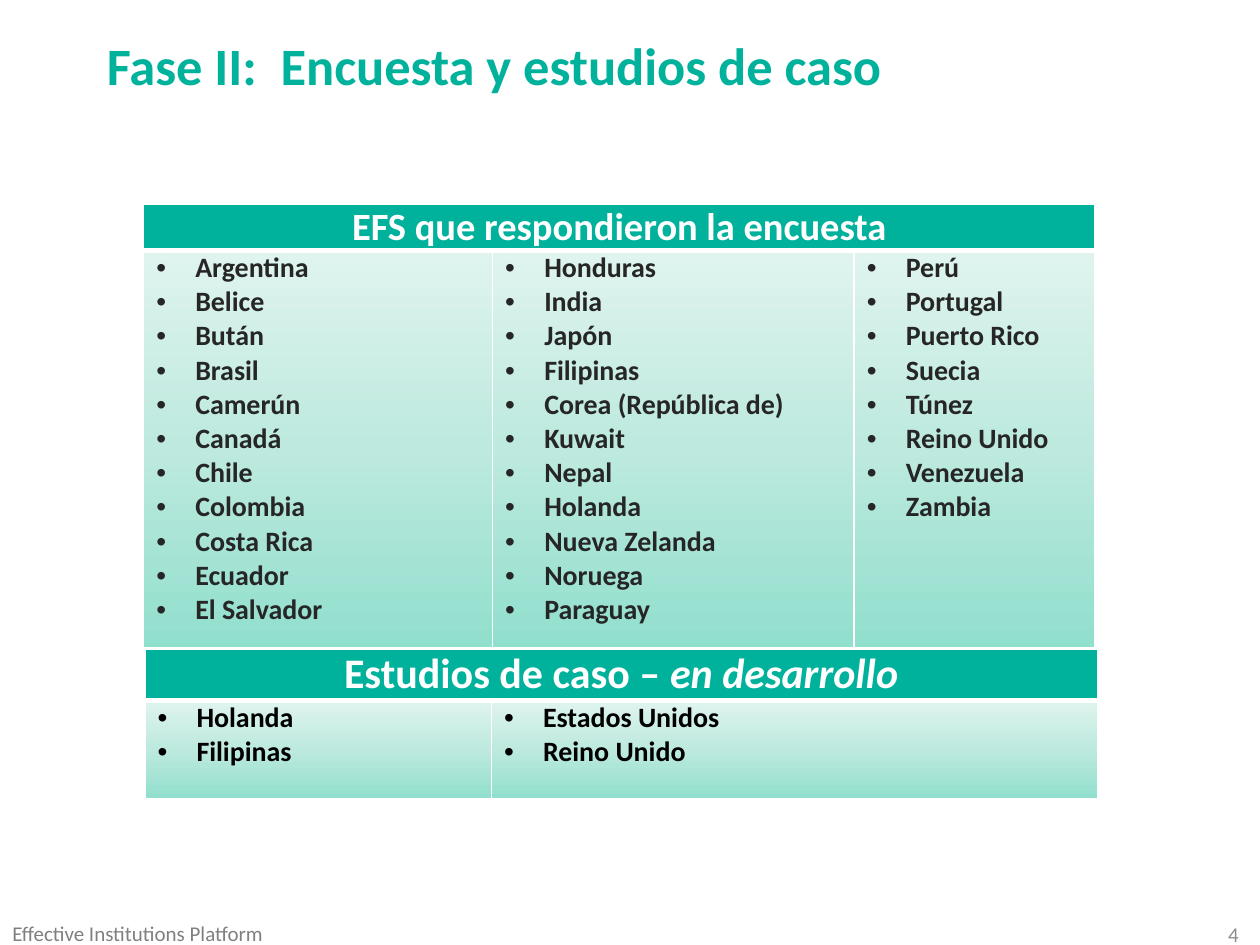
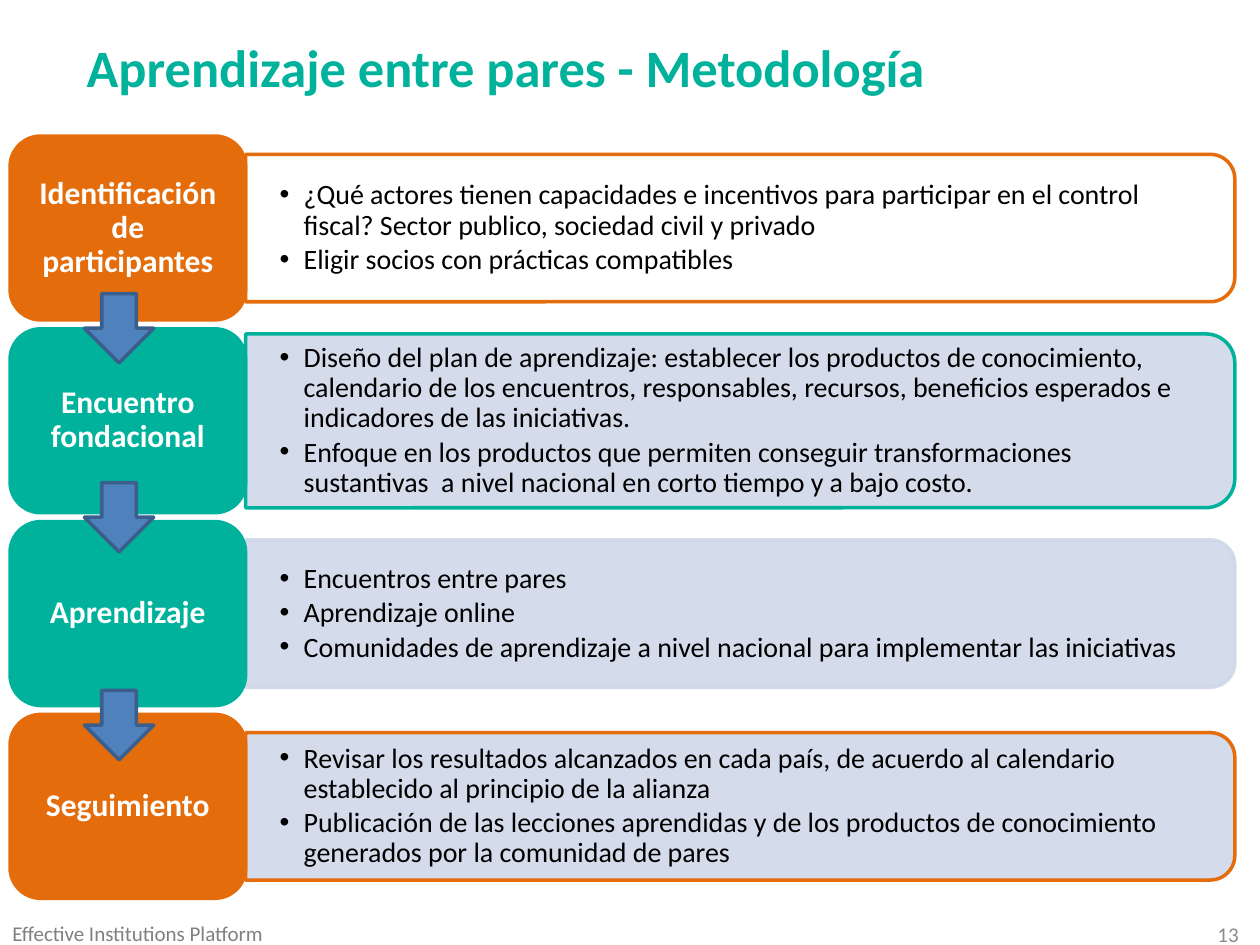
from dataclasses import dataclass

from lxml.etree import SubElement
from pptx import Presentation
from pptx.dml.color import RGBColor
from pptx.enum.shapes import MSO_SHAPE
from pptx.enum.text import MSO_ANCHOR, PP_ALIGN
from pptx.oxml.ns import qn
from pptx.util import Inches, Pt


@dataclass(frozen=True)
class Theme:
    font: str = "Calibri"
    teal: str = "00B29C"
    orange: str = "E46C0A"
    pale_blue: str = "D0D8E8"
    arrow_blue: str = "4F81BD"
    arrow_edge: str = "3A5F8C"
    white: str = "FFFFFF"
    black: str = "000000"
    dark: str = "262626"
    footer_gray: str = "808080"
    number_gray: str = "8C8C8C"
    mint: tuple = ((0, "91DFCD"), (50, "BDE9DE"), (100, "DFF4EE"))
    title_size: int = 30
    case_size: int = 24
    survey_size: int = 22
    stage_size: int = 18
    body_size: int = 16
    footer_size: int = 12


theme = Theme()


def write(frame, paragraphs, size, color, bold=False, indent=None,
          frame_format=None, paragraph_format=None):
    frame.word_wrap = True
    for name, value in (frame_format or {}).items():
        setattr(frame, name, value)
    for index, runs in enumerate(paragraphs):
        paragraph = frame.paragraphs[0] if index == 0 else frame.add_paragraph()
        if indent:
            properties = paragraph._p.get_or_add_pPr()
            properties.set("marL", str(Inches(indent)))
            properties.set("indent", str(-Inches(indent)))
            SubElement(properties, qn("a:buFont"), typeface="Arial")
            SubElement(properties, qn("a:buChar"), char="•")
        for name, value in (paragraph_format or {}).items():
            setattr(paragraph, name, value)
        for position, text in enumerate([runs] if isinstance(runs, str) else runs):
            run = paragraph.add_run()
            run.text = text
            font_format = {"name": theme.font, "size": Pt(size), "bold": bold,
                           "italic": position > 0}
            for name, value in font_format.items():
                setattr(run.font, name, value)
            run.font.color.rgb = RGBColor.from_string(color)


def style_cell(cell, is_header):
    cell.margin_top = cell.margin_bottom = 0
    properties = cell._tc.get_or_add_tcPr()
    widths = {"L": 1, "R": 1, "T": 1 if is_header else 3, "B": 3 if is_header else 1}
    for side, width in widths.items():
        border = SubElement(properties, qn(f"a:ln{side}"), w=str(Pt(width)))
        SubElement(SubElement(border, qn("a:solidFill")), qn("a:srgbClr"), val=theme.white)
    if is_header:
        cell.fill.solid()
        cell.fill.fore_color.rgb = RGBColor.from_string(theme.teal)
        return
    gradient = SubElement(properties, qn("a:gradFill"), rotWithShape="1")
    stops = SubElement(gradient, qn("a:gsLst"))
    for percent, color in theme.mint:
        stop = SubElement(stops, qn("a:gs"), pos=str(percent * 1000))
        SubElement(stop, qn("a:srgbClr"), val=color)
    SubElement(gradient, qn("a:lin"), ang=str(270 * 60000), scaled="1")


deck = Presentation()
deck.slide_width, deck.slide_height = Inches(10), Inches(7.5)

slides = []
for heading, left, top, number in [
    ("Fase II:  Encuesta y estudios de caso", 0.75, 0.21, "4"),
    ("Aprendizaje entre pares - Metodología", 0.59, 0.23, "13"),
]:
    slide = deck.slides.add_slide(deck.slide_layouts[6])
    slides.append(slide)
    page_number = slide.shapes.add_textbox(Inches(7.6), Inches(7.29), Inches(2.33), Inches(0.24))
    write(page_number.text_frame, [number], theme.footer_size, theme.number_gray,
          frame_format={"vertical_anchor": MSO_ANCHOR.MIDDLE},
          paragraph_format={"alignment": PP_ALIGN.RIGHT})
    footer = slide.shapes.add_textbox(0, Inches(7.26), Inches(4.84), Inches(0.3))
    write(footer.text_frame, ["Effective Institutions Platform"],
          theme.footer_size, theme.footer_gray)
    title = slide.shapes.add_textbox(Inches(left), Inches(top), Inches(9.06), Inches(0.61))
    write(title.text_frame, [heading], theme.title_size, theme.teal, bold=True)

survey_slide, method_slide = slides

country_tables = [
    (1.14, 1.62, (2.77, 2.87, 1.91), (0.37, 3.15),
     "EFS que respondieron la encuesta", theme.survey_size, theme.dark,
     [["Argentina", "Belice", "Bután", "Brasil", "Camerún", "Canadá", "Chile",
       "Colombia", "Costa Rica", "Ecuador", "El Salvador"],
      ["Honduras", "India", "Japón", "Filipinas", "Corea (República de)", "Kuwait",
       "Nepal", "Holanda", "Nueva Zelanda", "Noruega", "Paraguay"],
      ["Perú", "Portugal", "Puerto Rico", "Suecia", "Túnez", "Reino Unido",
       "Venezuela", "Zambia"]]),
    (1.15, 5.15, (2.75, 4.81), (0.41, 0.78),
     ("Estudios de caso – ", "en desarrollo"), theme.case_size, theme.black,
     [["Holanda", "Filipinas"], ["Estados Unidos", "Reino Unido"]]),
]
for left, top, widths, heights, heading, heading_size, country_color, countries in country_tables:
    table = survey_slide.shapes.add_table(
        2, len(widths), Inches(left), Inches(top),
        Inches(sum(widths)), Inches(sum(heights))).table
    for row, height in zip(table.rows, heights):
        row.height = Inches(height)
    for index, (width, names) in enumerate(zip(widths, countries)):
        table.columns[index].width = Inches(width)
        style_cell(table.cell(0, index), True)
        style_cell(table.cell(1, index), False)
        write(table.cell(1, index).text_frame, names, theme.body_size, country_color,
              bold=True, indent=0.31, paragraph_format={"alignment": PP_ALIGN.JUSTIFY})
    header = table.cell(0, 0)
    header.merge(table.cell(0, len(widths) - 1))
    write(header.text_frame, [heading], heading_size, theme.white, bold=True,
          paragraph_format={"alignment": PP_ALIGN.CENTER})

stages = [
    ("Identificación de participantes", theme.orange, theme.white, theme.orange, 1.17,
     ["¿Qué actores tienen capacidades e incentivos para participar en el control "
      "fiscal? Sector publico, sociedad civil y privado",
      "Eligir socios con prácticas compatibles"]),
    ("Encuentro fondacional", theme.teal, theme.pale_blue, theme.teal, 1.38,
     ["Diseño del plan de aprendizaje: establecer los productos de conocimiento, "
      "calendario de los encuentros, responsables, recursos, beneficios esperados e "
      "indicadores de las iniciativas.",
      "Enfoque en los productos que permiten conseguir transformaciones "
      "sustantivas  a nivel nacional en corto tiempo y a bajo costo."]),
    ("Aprendizaje", theme.teal, theme.pale_blue, theme.pale_blue, 1.17,
     ["Encuentros entre pares", "Aprendizaje online",
      "Comunidades de aprendizaje a nivel nacional para implementar las iniciativas"]),
    ("Seguimiento", theme.orange, theme.pale_blue, theme.orange, 1.17,
     ["Revisar los resultados alcanzados en cada país, de acuerdo al calendario "
      "establecido al principio de la alianza",
      "Publicación de las lecciones aprendidas y de los productos de conocimiento "
      "generados por la comunidad de pares"]),
]
stage_left, stage_width, stage_height, stage_step = 0.08, 1.87, 1.46, 1.53
panel_left, panel_length = stage_left + stage_width, 7.85
stage_format = {"vertical_anchor": MSO_ANCHOR.MIDDLE,
                "margin_left": Inches(0.14), "margin_right": Inches(0.14),
                "margin_top": Inches(0.11), "margin_bottom": Inches(0.11)}
detail_format = {"vertical_anchor": MSO_ANCHOR.MIDDLE,
                 "margin_left": Inches(0.27), "margin_right": Inches(0.27),
                 "margin_top": Inches(0.14), "margin_bottom": Inches(0.14)}

for index, (name, stage_color, panel_fill, panel_edge, depth, points) in enumerate(stages):
    stage_top = 1.08 + index * stage_step
    middle = stage_top + stage_height / 2

    panel = method_slide.shapes.add_shape(
        MSO_SHAPE.ROUND_2_SAME_RECTANGLE,
        Inches(panel_left + (panel_length - depth) / 2), Inches(middle - panel_length / 2),
        Inches(depth), Inches(panel_length))
    panel.rotation = 90
    stage = method_slide.shapes.add_shape(
        MSO_SHAPE.ROUNDED_RECTANGLE, Inches(stage_left), Inches(stage_top),
        Inches(stage_width), Inches(stage_height))
    for shape, fill, edge in [(panel, panel_fill, panel_edge), (stage, stage_color, stage_color)]:
        shape.shadow.inherit = False
        shape.fill.solid()
        shape.fill.fore_color.rgb = RGBColor.from_string(fill)
        shape.line.color.rgb = RGBColor.from_string(edge)
        shape.line.width = Pt(2)
    for tint in panel._element.spPr.iter(qn("a:srgbClr")):
        if tint.get("val") == panel_fill:
            SubElement(tint, qn("a:alpha"), val="90000")

    write(stage.text_frame, [name], theme.stage_size, theme.white, bold=True,
          frame_format=stage_format,
          paragraph_format={"alignment": PP_ALIGN.CENTER, "line_spacing": 0.9})
    detail = method_slide.shapes.add_textbox(
        Inches(panel_left), Inches(middle - depth / 2 + 0.06),
        Inches(7.79), Inches(depth - 0.12))
    write(detail.text_frame, points, theme.body_size, theme.black, indent=0.19,
          frame_format=detail_format,
          paragraph_format={"line_spacing": 0.9, "space_after": Pt(2.4)})

for arrow_top in (2.33, 3.83, 5.48):
    arrow = method_slide.shapes.add_shape(
        MSO_SHAPE.DOWN_ARROW, Inches(0.67), Inches(arrow_top), Inches(0.55), Inches(0.55))
    arrow.shadow.inherit = False
    arrow.fill.solid()
    arrow.fill.fore_color.rgb = RGBColor.from_string(theme.arrow_blue)
    arrow.line.color.rgb = RGBColor.from_string(theme.arrow_edge)
    arrow.line.width = Pt(2)

deck.save("out.pptx")
